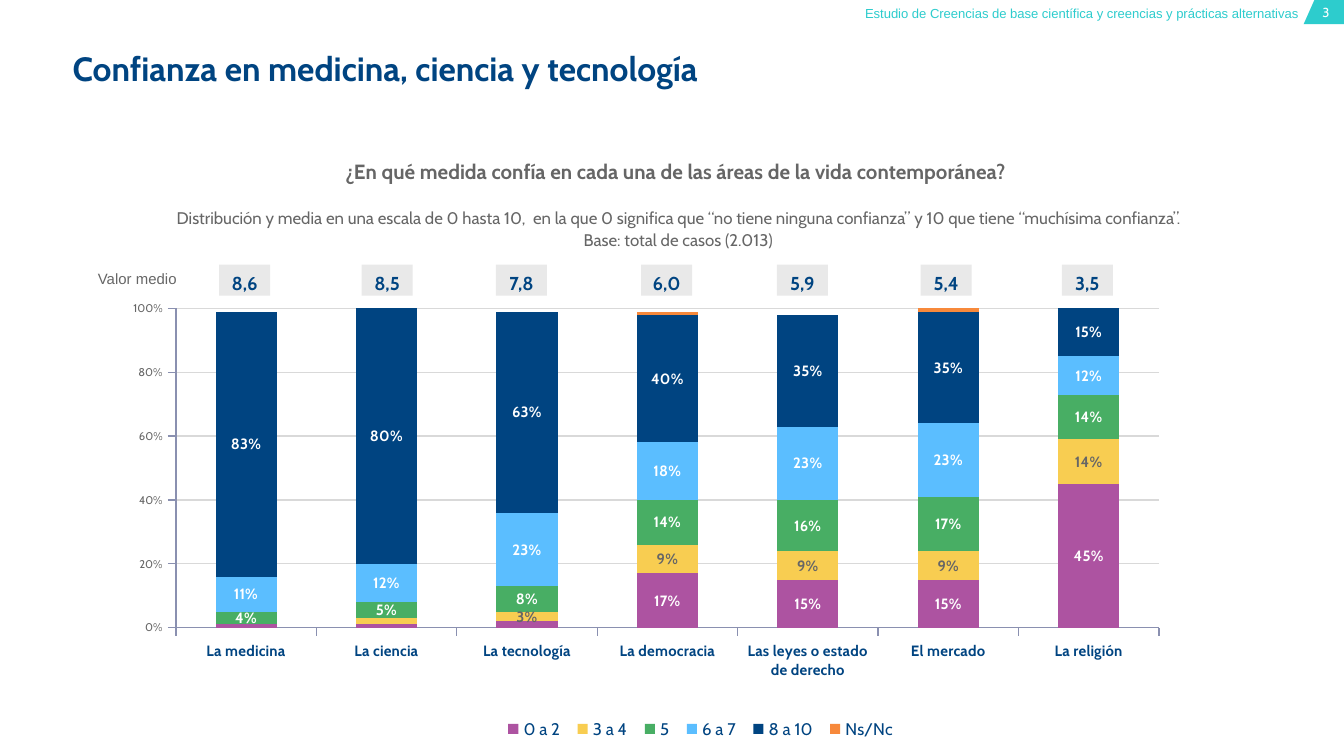
from pptx import Presentation
from pptx.chart.data import CategoryChartData
from pptx.dml.color import RGBColor
from pptx.enum.chart import XL_CHART_TYPE, XL_LABEL_POSITION, XL_LEGEND_POSITION, XL_TICK_MARK
from pptx.enum.shapes import MSO_SHAPE
from pptx.enum.text import MSO_ANCHOR, PP_ALIGN
from pptx.oxml import parse_xml
from pptx.oxml.ns import nsdecls, qn
from pptx.util import Inches, Pt

NAVY, TEAL, GRAY, WHITE = "004481", "2DCCCD", "666666", "FFFFFF"
AXIS_LINE = "8A90B0"

CATEGORIES = ["La medicina", "La ciencia", "La tecnología", "La democracia",
              "Las leyes o estado de derecho", "El mercado", "La religión"]
# name, values, fill, label colour (None: no labels), points without a label
SERIES = [
    ("0 a 2", [0.01, 0.01, 0.02, 0.17, 0.15, 0.15, 0.45], "AD53A1", WHITE, [0, 1, 2]),
    ("3 a 4", [0, 0.02, 0.03, 0.09, 0.09, 0.09, 0.14], "F8CD51", GRAY, [0, 1]),
    ("5", [0.04, 0.05, 0.08, 0.14, 0.16, 0.17, 0.14], "48AE64", WHITE, []),
    ("6 a 7", [0.11, 0.12, 0.23, 0.18, 0.23, 0.23, 0.12], "5BBEFF", WHITE, []),
    ("8 a 10", [0.83, 0.8, 0.63, 0.4, 0.35, 0.35, 0.15], NAVY, WHITE, []),
    ("Ns/Nc", [None, None, None, 0.01, 0, 0.01, 0], "F7893B", None, []),
]
# left edge and mean
MEANS = [(1.63, "8,6"), (2.69, "8,5"), (3.69, "7,8"), (4.77, "6,0"),
         (5.78, "5,9"), (6.85, "5,4"), (7.9, "3,5")]


def rgb(color):
    return RGBColor.from_string(color)


def style_font(font, size, color, name="Cabin", bold=False):
    font.size = Pt(size)
    font.name = name
    font.bold = bold
    font.color.rgb = rgb(color)


def place(shape, left, top, width, height):
    shape.left, shape.top = Inches(left), Inches(top)
    shape.width, shape.height = Inches(width), Inches(height)


def fill_plain(shape, color):
    shape.shadow.inherit = False
    shape.fill.solid()
    shape.fill.fore_color.rgb = rgb(color)
    shape.line.fill.background()


def write(shape, lines, size, color, name="Cabin", bold=False, align=PP_ALIGN.LEFT,
          wrap=True, inset=True, spacing=None):
    frame = shape.text_frame
    frame.word_wrap = wrap
    frame.vertical_anchor = MSO_ANCHOR.TOP
    if not inset:
        frame.margin_left = frame.margin_right = frame.margin_top = frame.margin_bottom = 0
    for index, line in enumerate(lines):
        paragraph = frame.add_paragraph() if index else frame.paragraphs[0]
        paragraph.alignment = align
        if spacing:
            paragraph.line_spacing = spacing
        run = paragraph.add_run()
        run.text = line
        style_font(run.font, size, color, name, bold)


def add_text(slide, box, lines, size, color, **options):
    textbox = slide.shapes.add_textbox(*map(Inches, box))
    write(textbox, lines, size, color, **options)


def add_page_corner(slide):
    builder = slide.shapes.build_freeform(Inches(9.78), 0)
    corners = [(10, 0), (10, 0.18), (9.7, 0.18)]
    builder.add_line_segments([(Inches(x), Inches(y)) for x, y in corners], close=True)
    fill_plain(builder.convert_to_shape(), TEAL)


def add_mean_box(slide, left, mean):
    shape = slide.shapes.add_shape(MSO_SHAPE.RECTANGLE, Inches(left), Inches(1.97),
                                   Inches(0.38), Inches(0.23))
    fill_plain(shape, "E9E9E9")
    write(shape, [mean], 10, NAVY, bold=True, align=PP_ALIGN.CENTER, wrap=False)


def set_layout(element, position, left, top, width, height, inner=False):
    """Fix a chart part by fractions of the chart; position is its child index."""
    for old in element.findall(qn("c:layout")):
        element.remove(old)
    target = '<c:layoutTarget val="inner"/>' if inner else ""
    element.insert(position, parse_xml(
        f'<c:layout {nsdecls("c")}><c:manualLayout>{target}'
        '<c:xMode val="edge"/><c:yMode val="edge"/>'
        f'<c:x val="{left}"/><c:y val="{top}"/><c:w val="{width}"/><c:h val="{height}"/>'
        '</c:manualLayout></c:layout>'))


def label_series(series, color, hidden_points):
    labels = series.data_labels
    labels.show_value = True
    labels.position = XL_LABEL_POSITION.CENTER
    labels.number_format = "0%"
    labels.number_format_is_linked = False
    style_font(labels.font, 8, color, bold=True)
    for position, point in enumerate(hidden_points):
        labels._element.insert(position, parse_xml(
            f'<c:dLbl {nsdecls("c")}><c:idx val="{point}"/><c:delete val="1"/></c:dLbl>'))


def style_axis(axis, size, color, bold):
    axis.major_tick_mark = XL_TICK_MARK.OUTSIDE
    axis.minor_tick_mark = XL_TICK_MARK.NONE
    axis.format.line.color.rgb = rgb(AXIS_LINE)
    axis.format.line.width = Pt(0.75)
    style_font(axis.tick_labels.font, size, color, bold=bold)


def add_trust_chart(slide):
    data = CategoryChartData(number_format="0%")
    data.categories = CATEGORIES
    for name, values, *_ in SERIES:
        data.add_series(name, values)
    chart = slide.shapes.add_chart(XL_CHART_TYPE.COLUMN_STACKED, Inches(0.98), Inches(1.86),
                                   Inches(8.22), Inches(3.96), data).chart
    chart.has_title = False
    style_font(chart.font, 11, WHITE, "Calibri", True)

    plot = chart.plots[0]
    plot.gap_width, plot.overlap = 130, 100
    plot.vary_by_categories = False
    for series, (_, _, fill, label_color, hidden_points) in zip(plot.series, SERIES):
        series.format.fill.solid()
        series.format.fill.fore_color.rgb = rgb(fill)
        if label_color:
            label_series(series, label_color, hidden_points)

    style_axis(chart.category_axis, 8, NAVY, True)
    value_axis = chart.value_axis
    style_axis(value_axis, 6, GRAY, False)
    value_axis.minimum_scale, value_axis.maximum_scale, value_axis.major_unit = 0, 1, 0.2
    value_axis.tick_labels.number_format = "0%"
    value_axis.tick_labels.number_format_is_linked = False
    value_axis.has_major_gridlines = True
    value_axis.major_gridlines.format.line.color.rgb = rgb("D9D9D9")
    value_axis.major_gridlines.format.line.width = Pt(0.75)

    chart.has_legend = True
    chart.legend.position = XL_LEGEND_POSITION.BOTTOM
    chart.legend.include_in_layout = False
    style_font(chart.legend.font, 9, NAVY)
    set_layout(chart.legend._element, 1, 0.33, 0.87, 0.37, 0.06)
    plot_area = chart._chartSpace.find(".//" + qn("c:plotArea"))
    set_layout(plot_area, 0, 0.04, 0.11, 0.89, 0.6, inner=True)


def main():
    presentation = Presentation()
    presentation.slide_width = Inches(10)
    presentation.slide_height = presentation.slide_width * 9 // 16
    slide = presentation.slides.add_slide(presentation.slide_layouts[5])

    add_page_corner(slide)
    add_text(slide, (9.75, 0.03, 0.23, 0.12), ["3"], 7, WHITE,
             align=PP_ALIGN.CENTER, inset=False)
    add_text(slide, (6.39, 0.04, 3.27, 0.12),
             ["Estudio de Creencias de base científica y creencias y prácticas alternativas"],
             7, TEAL, name="Arial", align=PP_ALIGN.RIGHT, inset=False)

    title = slide.shapes.title
    place(title, 0.54, 0.36, 8.81, 0.37)
    write(title, ["Confianza en medicina, ciencia y tecnología"], 18, NAVY,
          bold=True, inset=False)

    add_text(slide, (0.82, 1.48, 8.45, 0.43),
             ["Distribución y media en una escala de 0 hasta 10,  en la que 0 significa que "
              "“no tiene ninguna confianza” y 10 que tiene “muchísima confianza”.",
              "Base: total de casos (2.013)"],
             9, GRAY, align=PP_ALIGN.CENTER, spacing=1.11)
    add_text(slide, (0.68, 1.18, 8.7, 0.25),
             ["¿En qué medida confía en cada una de las áreas de la vida contemporánea?"],
             11, GRAY, bold=True, align=PP_ALIGN.CENTER, inset=False)

    add_trust_chart(slide)
    add_text(slide, (0.63, 1.96, 0.8, 0.24), ["Valor medio"], 8, GRAY,
             name="Arial", wrap=False)
    for left, mean in MEANS:
        add_mean_box(slide, left, mean)

    presentation.save("out.pptx")


if __name__ == "__main__":
    main()
